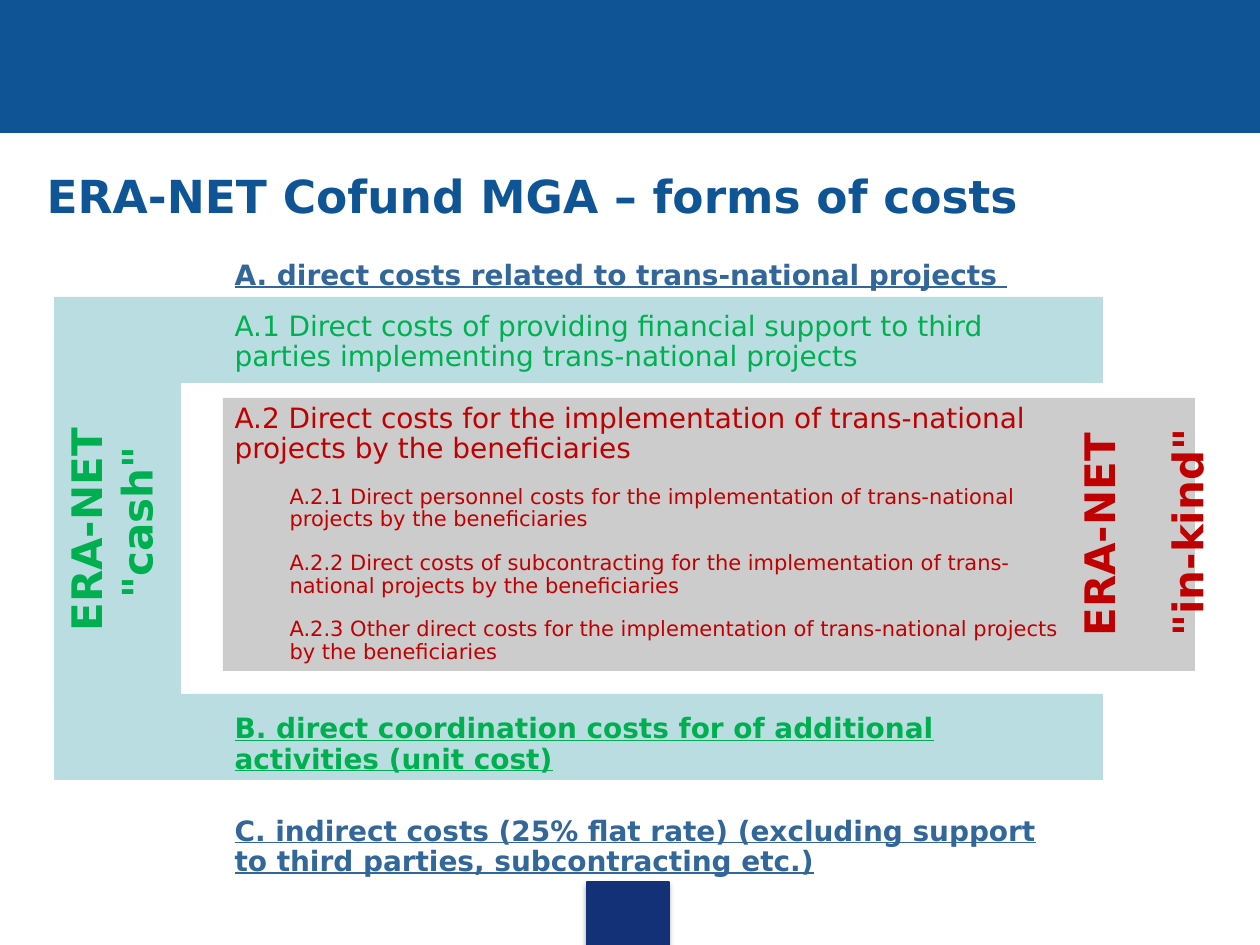
from lxml import etree
from pptx import Presentation
from pptx import util as u
from pptx.dml.color import RGBColor
from pptx.enum import shapes, text
from pptx.oxml import ns

FONT = "DejaVu Sans"
BLUE, NAVY, STEEL = "0F5494", "133176", "336699"
GREEN, RED, TEAL, GREY = "00B050", "C00000", "BADDE1", "CCCCCC"

TITLE = "ERA-NET Cofund MGA – forms of costs"
HEADING = {"size": 16, "bold": True, "underline": True}
ITEM = {"size": 16}
DETAIL = {"size": 12, "level": 1}
COSTS = [
    ("A. direct costs related to trans-national projects ", STEEL, 0, HEADING),
    ("A.1 Direct costs of providing financial support to third parties "
     "implementing trans-national projects", GREEN, 6, ITEM),
    ("A.2 Direct costs for the implementation of trans-national projects "
     "by the beneficiaries", RED, 12, ITEM),
    ("A.2.1 Direct personnel costs for the implementation of trans-national "
     "projects by the beneficiaries", RED, 6, DETAIL),
    ("A.2.2 Direct costs of subcontracting for the implementation of "
     "trans-national projects by the beneficiaries", RED, 6, DETAIL),
    ("A.2.3 Other direct costs for the implementation of trans-national "
     "projects by the beneficiaries", RED, 6, DETAIL),
    ("B. direct coordination costs for of additional activities (unit cost)",
     GREEN, 23, HEADING),
    ("C. indirect costs (25% flat rate) (excluding support to third parties, "
     "subcontracting etc.)", STEEL, 18, HEADING),
]
CASH = ["ERA-NET ", '"cash"']
IN_KIND = ["ERA-NET ", '"in-kind"']
CASH_BARS = [(54, 297, 1049, 86), (54, 694, 1049, 86)]


def px(value):
    return u.Emu(round(value * 914400 / 126))


def colour(code):
    return RGBColor.from_string(code)


def place(shape, left, top, width, height):
    shape.left, shape.top = px(left), px(top)
    shape.width, shape.height = px(width), px(height)


def add_bar(parent, area, fill, line=None):
    bar = parent.add_shape(shapes.MSO_SHAPE.RECTANGLE, *map(px, area))
    bar.shadow.inherit = False
    bar.fill.solid()
    bar.fill.fore_color.rgb = colour(fill)
    if line:
        bar.line.color.rgb = colour(line)
        bar.line.width = u.Pt(0.75)
    else:
        bar.line.fill.background()
    return bar


def add_span(para, words, size, code, bold=False, underline=False):
    span = para.add_run()
    span.text = words
    font = span.font
    font.name, font.size = FONT, u.Pt(size)
    font.bold, font.underline = bold, underline
    font.color.rgb = colour(code)


def write_upward(box, lines, code, align, anchor):
    frame = box.text_frame
    frame.word_wrap = True
    frame.vertical_anchor = anchor
    frame._txBody.bodyPr.set("vert", "vert270")
    para = frame.paragraphs[0]
    para.alignment = align
    for number, line in enumerate(lines):
        if number:
            para.add_line_break()
        add_span(para, line, 24, code, bold=True)


def add_soft_shadow(shape):
    effects = shape._element.spPr.find(ns.qn("a:effectLst"))
    shadow = etree.SubElement(effects, ns.qn("a:outerShdw"), blurRad=str(u.Pt(3.1)),
                              dist=str(u.Pt(1.8)), dir="5400000", rotWithShape="0")
    black = etree.SubElement(shadow, ns.qn("a:srgbClr"), val="000000")
    etree.SubElement(black, ns.qn("a:alpha"), val="35000")


def write_costs(body):
    frame = body.text_frame
    frame.word_wrap = True
    frame.auto_size = text.MSO_AUTO_SIZE.NONE
    frame.vertical_anchor = text.MSO_ANCHOR.TOP
    for number, (words, code, before, style) in enumerate(COSTS):
        para = frame.add_paragraph() if number else frame.paragraphs[0]
        style = dict(style)
        para.level = style.pop("level", 0)
        props = para._p.get_or_add_pPr()
        props.set("marL", str(px(55 * para.level)))
        props.set("indent", "0")
        etree.SubElement(props, ns.qn("a:buNone"))
        para.line_spacing = 0.9
        para.space_before, para.space_after = u.Pt(before), u.Pt(6)
        add_span(para, words, code=code, **style)


def main():
    deck = Presentation()
    deck.slide_width, deck.slide_height = px(1260), px(945)
    page = deck.slides.add_slide(deck.slide_layouts[1])
    title, body = page.placeholders

    add_bar(page.shapes, (0, 0, 1260, 132), BLUE, BLUE)
    add_soft_shadow(add_bar(page.shapes, (587, 882, 82, 63), NAVY, NAVY))

    place(title, 34, 135, 1152, 120)
    frame = title.text_frame
    frame.word_wrap = True
    frame.auto_size = text.MSO_AUTO_SIZE.NONE
    frame.vertical_anchor = text.MSO_ANCHOR.MIDDLE
    frame.paragraphs[0].alignment = text.PP_ALIGN.LEFT
    add_span(frame.paragraphs[0], TITLE, 26, BLUE, bold=True)

    in_kind = page.shapes.add_group_shape().shapes
    add_bar(in_kind, (223, 398, 972, 273), GREY)
    label = in_kind.add_textbox(*map(px, (1067, 412, 127, 237)))
    write_upward(label, IN_KIND, RED, text.PP_ALIGN.LEFT, text.MSO_ANCHOR.TOP)

    cash = page.shapes.add_group_shape().shapes
    for area in CASH_BARS:
        add_bar(cash, area, TEAL)
    column = add_bar(cash, (54, 335, 127, 375), TEAL)
    write_upward(column, CASH, GREEN, text.PP_ALIGN.CENTER, text.MSO_ANCHOR.TOP)

    place(body, 222, 255, 853, 698)
    write_costs(body)
    page.shapes._spTree.append(body._element)

    deck.save("out.pptx")


if __name__ == "__main__":
    main()
